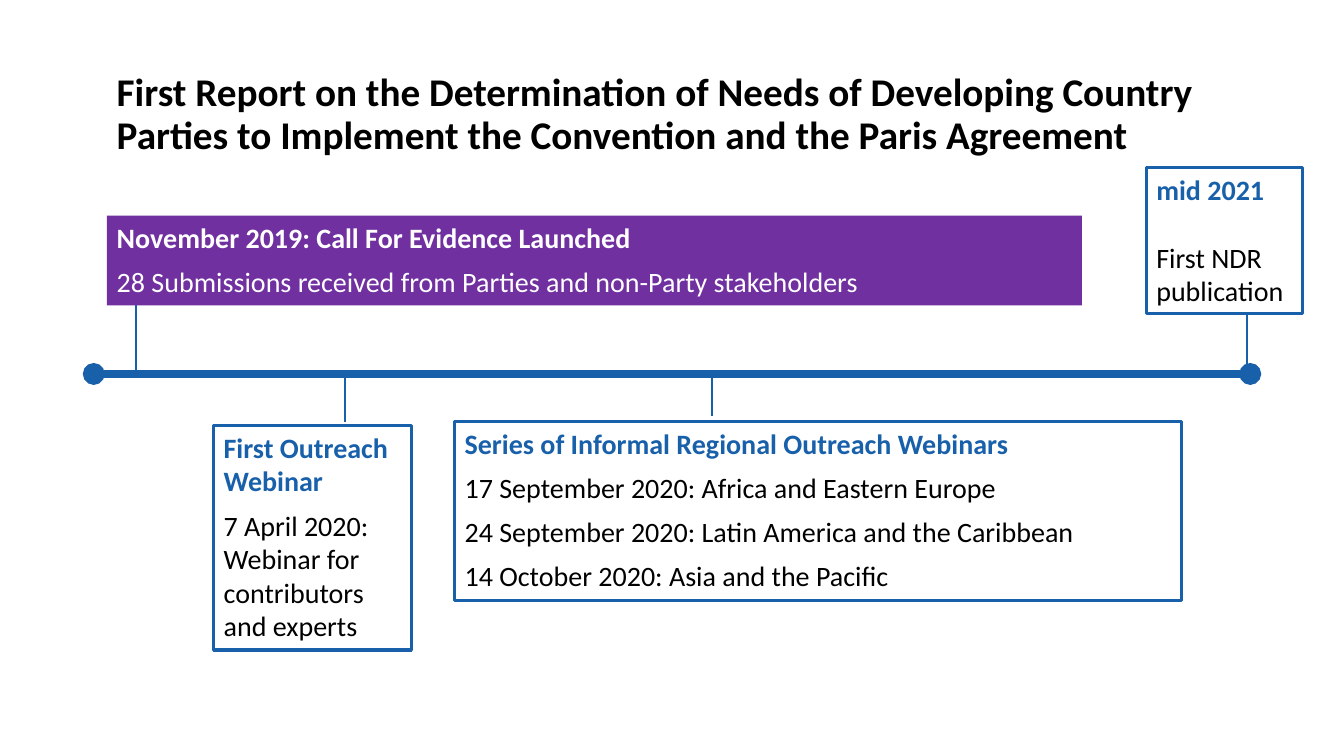
from dataclasses import dataclass

import pptx
import pptx.dml.color
import pptx.enum.shapes
import pptx.enum.text
import pptx.oxml
import pptx.oxml.ns
import pptx.util
from pptx.util import Inches


@dataclass(frozen=True)
class Theme:
    font: str = "Calibri"
    blue: str = "1960AB"
    purple: str = "7030A0"
    black: str = "000000"
    white: str = "FFFFFF"
    title_size: float = 28
    body_size: float = 20
    paragraph_gap: float = 7.5
    publication_gap: float = 24.4
    axis_width: float = 5.25
    stem_width: float = 1.5
    border_width: float = 2.5


THEME = Theme()
AXIS_Y = 3.71


def rgb(code):
    return pptx.dml.color.RGBColor.from_string(code)


def style_paragraph(paragraph, size, color, bold):
    paragraph.alignment = pptx.enum.text.PP_ALIGN.LEFT
    for run in paragraph.runs:
        run.font.name = THEME.font
        run.font.size = pptx.util.Pt(size)
        run.font.bold = bold
        run.font.color.rgb = rgb(color)


def add_title(slide, wording):
    title = slide.shapes.add_textbox(Inches(1.06), Inches(0.43), Inches(11.86), Inches(1.83))
    frame = title.text_frame
    frame.word_wrap = True
    frame.vertical_anchor = pptx.enum.text.MSO_ANCHOR.MIDDLE
    frame.margin_bottom = Inches(0.45)
    frame.text = wording
    frame.paragraphs[0].line_spacing = 0.9
    style_paragraph(frame.paragraphs[0], THEME.title_size, THEME.black, True)


def add_line(slide, start, end, width):
    line = slide.shapes.add_connector(
        pptx.enum.shapes.MSO_CONNECTOR.STRAIGHT, *map(Inches, start + end))
    line.line.color.rgb = rgb(THEME.blue)
    line.line.width = pptx.util.Pt(width)
    properties = line.element.spPr
    properties.append(pptx.oxml.parse_xml(f"<a:effectLst {pptx.oxml.ns.nsdecls('a')}/>"))
    return line


def add_axis(slide):
    """Draw the timeline with a round dot at both ends."""
    axis = add_line(slide, (0.93, AXIS_Y), (12.4, AXIS_Y), THEME.axis_width)
    outline = axis.line.color and axis.element.spPr.find(pptx.oxml.ns.qn("a:ln"))
    for end in ("headEnd", "tailEnd"):
        outline.append(pptx.oxml.parse_xml(
            f'<a:{end} {pptx.oxml.ns.nsdecls("a")} type="oval"/>'))


def add_event(slide, place, heading, details, fill=None, gap=THEME.paragraph_gap):
    """Add a box with a bold heading; a filled box has white text and no border."""
    event = slide.shapes.add_shape(
        pptx.enum.shapes.MSO_SHAPE.RECTANGLE, *map(Inches, place))
    event.shadow.inherit = False
    if fill:
        event.fill.solid()
        event.fill.fore_color.rgb = rgb(fill)
        event.line.fill.background()
        heading_color = detail_color = THEME.white
    else:
        event.fill.background()
        event.line.color.rgb = rgb(THEME.blue)
        event.line.width = pptx.util.Pt(THEME.border_width)
        heading_color, detail_color = THEME.blue, THEME.black

    frame = event.text_frame
    frame.word_wrap = True
    frame.auto_size = pptx.enum.text.MSO_AUTO_SIZE.SHAPE_TO_FIT_TEXT
    frame.vertical_anchor = pptx.enum.text.MSO_ANCHOR.TOP
    frame.text = heading
    style_paragraph(frame.paragraphs[0], THEME.body_size, heading_color, True)
    for detail in details:
        paragraph = frame.add_paragraph()
        paragraph.text = detail
        paragraph.space_before = pptx.util.Pt(gap)
        style_paragraph(paragraph, THEME.body_size, detail_color, False)


def main():
    deck = pptx.Presentation()
    deck.slide_width, deck.slide_height = Inches(13.33), Inches(7.5)
    slide = deck.slides.add_slide(deck.slide_layouts[6])

    add_title(slide, "First Report on the Determination of Needs of Developing Country "
                     "Parties to Implement the Convention and the Paris Agreement")
    add_axis(slide)
    for x, top, bottom in [(1.35, 2.58, 3.67), (3.42, 3.68, 4.19),
                           (7.06, 3.68, 4.13), (12.37, 3.12, AXIS_Y)]:
        add_line(slide, (x, top), (x, bottom), THEME.stem_width)

    add_event(slide, (2.12, 4.22, 1.96, 2.23), "First Outreach Webinar",
              ["7 April 2020: Webinar for contributors and experts"])
    add_event(slide, (1.06, 2.14, 9.67, 0.89), "November 2019: Call For Evidence Launched",
              ["28 Submissions received from Parties and non-Party stakeholders"],
              fill=THEME.purple)
    add_event(slide, (4.51, 4.18, 7.21, 1.78), "Series of Informal Regional Outreach Webinars",
              ["17 September 2020: Africa and Eastern Europe",
               "24 September 2020: Latin America and the Caribbean",
               "14 October 2020: Asia and the Pacific"])
    add_event(slide, (11.37, 1.66, 1.55, 1.45), "mid 2021", ["First NDR publication"],
              gap=THEME.publication_gap)

    deck.save("out.pptx")


if __name__ == "__main__":
    main()
